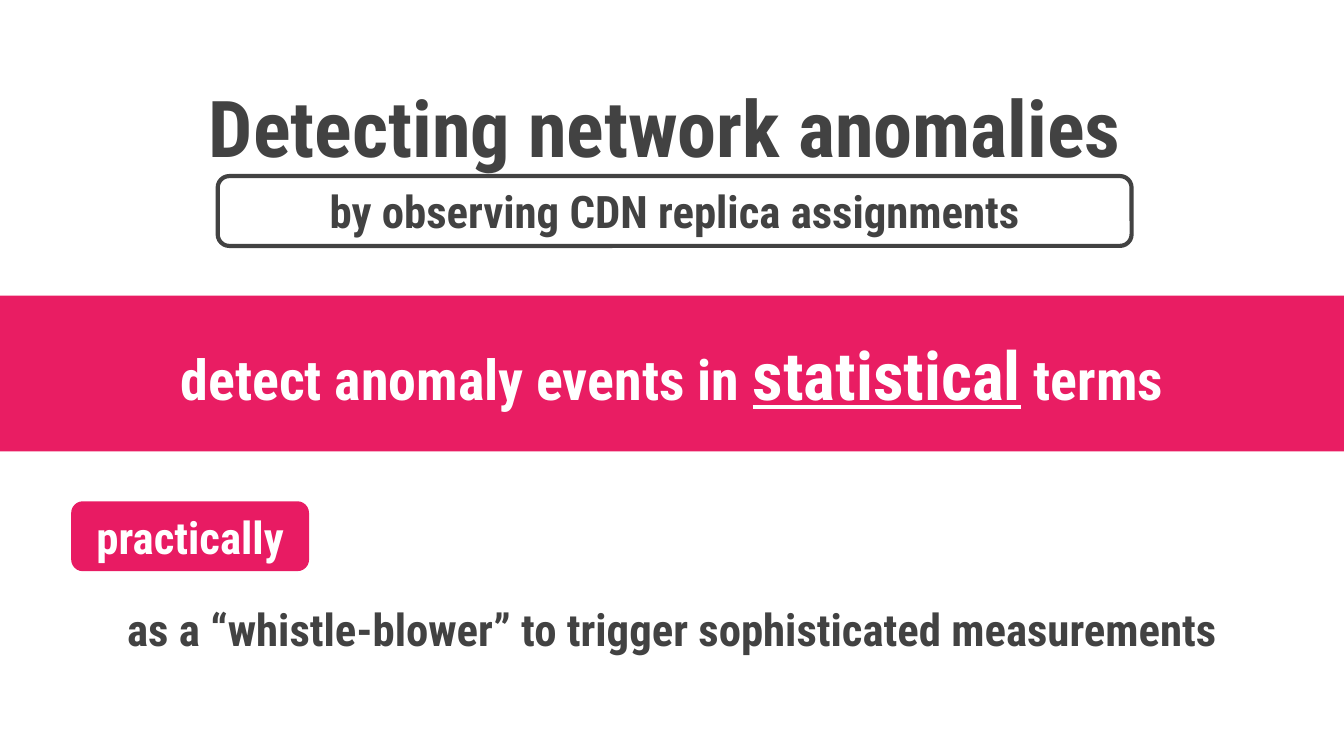
"""Build the slide on detecting network anomalies."""
import pptx
import pptx.dml.color
import pptx.enum.shapes
import pptx.enum.text
import pptx.util

Inches = pptx.util.Inches
Shapes = pptx.enum.shapes.MSO_SHAPE

FONT = "Roboto Condensed"
DARK, WHITE, PINK, TAG_PINK = "424242", "FFFFFF", "E91D63", "E81B63"

title = {"box": (0.86, 0.21, 8.31, 1.45), "color": DARK,
         "runs": [("Detecting network anomalies ", 42, False)]}
method = {"box": (1.62, 1.31, 6.8, 0.52), "color": DARK,
          "outline": Shapes.ROUNDED_RECTANGLE, "fill": WHITE, "border": DARK,
          "runs": [("by observing CDN replica assignments", 24, False)]}
goal = {"box": (0, 2.2, 10, 1.16), "color": WHITE,
        "outline": Shapes.RECTANGLE, "fill": PINK,
        "runs": [("detect anomaly events in ", 30, False),
                 ("statistical", 36, True),
                 (" terms", 30, False)]}
practice = {"box": (0, 4, 10, 1.36), "color": DARK,
            "runs": [("as a “whistle-blower” to trigger sophisticated measurements", 24, False)]}
practice_tag = {"box": (0.53, 3.73, 1.77, 0.52), "color": WHITE,
                "outline": Shapes.ROUNDED_RECTANGLE, "fill": TAG_PINK,
                "runs": [("practically", 24, False)]}


def rgb(hex_color):
    return pptx.dml.color.RGBColor.from_string(hex_color)


def add_panel(slide, outline, box, fill, border=None):
    panel = slide.shapes.add_shape(outline, *box)
    panel.shadow.inherit = False
    panel.fill.solid()
    panel.fill.fore_color.rgb = rgb(fill)
    if border:
        panel.line.color.rgb = rgb(border)
        panel.line.width = pptx.util.Pt(2.25)
    else:
        panel.line.fill.background()
    return panel


def write(frame, runs, color):
    frame.word_wrap = True
    frame.vertical_anchor = pptx.enum.text.MSO_ANCHOR.MIDDLE
    frame.margin_left = frame.margin_right = Inches(0.1)
    frame.margin_top = frame.margin_bottom = Inches(0.1)
    paragraph = frame.paragraphs[0]
    paragraph.alignment = pptx.enum.text.PP_ALIGN.CENTER
    for wording, size, underlined in runs:
        run = paragraph.add_run()
        run.text = wording
        run.font.name = FONT
        run.font.size = pptx.util.Pt(size)
        run.font.bold = True
        run.font.underline = underlined
        run.font.color.rgb = rgb(color)


def main():
    deck = pptx.Presentation()
    deck.slide_width = Inches(10)
    deck.slide_height = deck.slide_width * 9 // 16
    slide = deck.slides.add_slide(deck.slide_layouts[6])
    for part in (title, method, goal, practice, practice_tag):
        box = [Inches(length) for length in part["box"]]
        if "outline" in part:
            holder = add_panel(slide, part["outline"], box, part["fill"], part.get("border"))
        else:
            holder = slide.shapes.add_textbox(*box)
        write(holder.text_frame, part["runs"], part["color"])
    deck.save("out.pptx")


if __name__ == "__main__":
    main()
